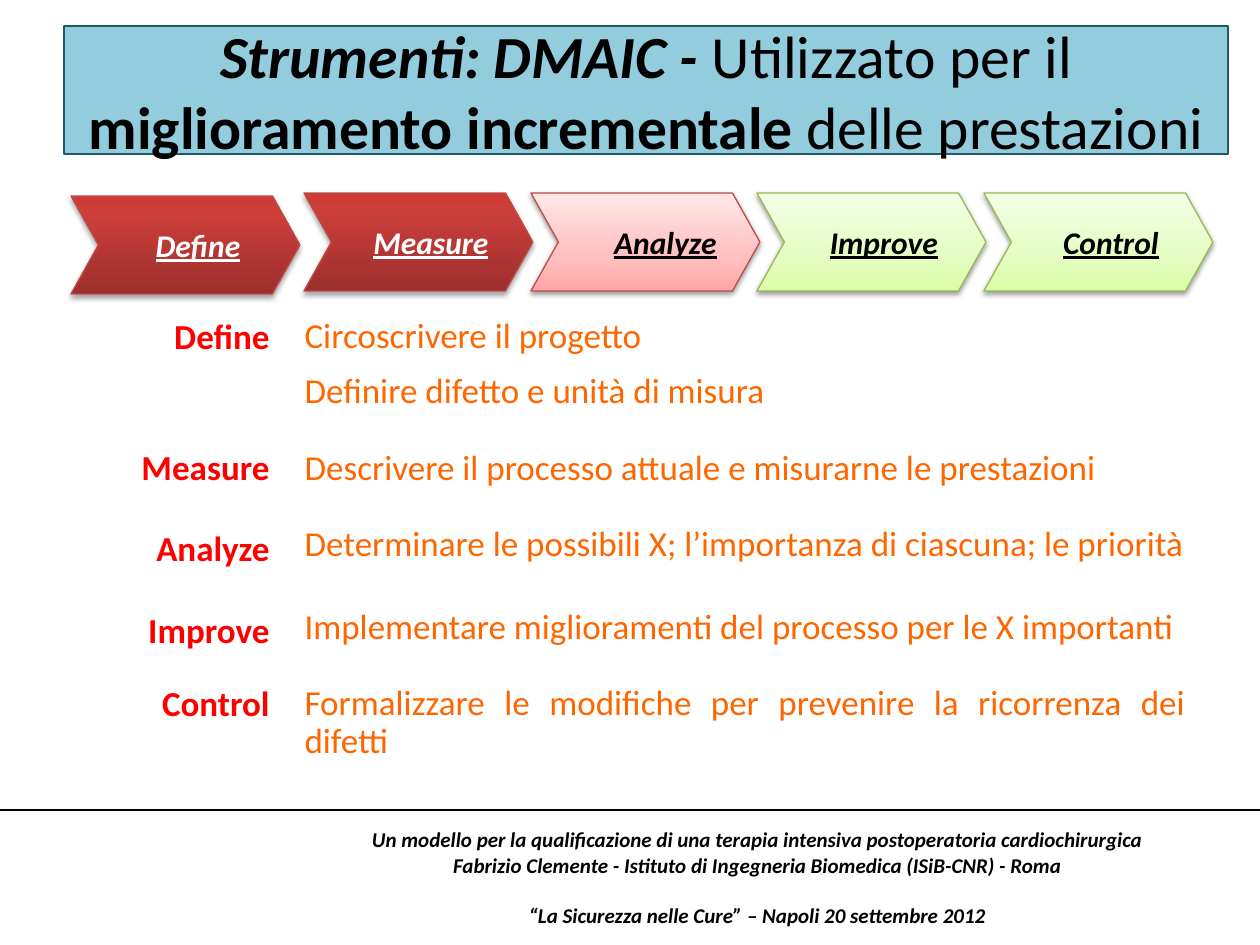
from lxml.etree import SubElement
from copy import deepcopy
from pptx import Presentation
from pptx.dml.color import RGBColor
from pptx.enum.shapes import MSO_CONNECTOR, MSO_SHAPE
from pptx.enum.text import MSO_ANCHOR, MSO_AUTO_SIZE, PP_ALIGN
from pptx.oxml.ns import qn
from pptx.util import Emu, Pt

BLACK = RGBColor(0x00, 0x00, 0x00)
WHITE = RGBColor(0xFF, 0xFF, 0xFF)
RED = RGBColor(0xFF, 0x00, 0x00)
ORANGE = RGBColor(0xFF, 0x66, 0x00)
SKY = RGBColor(0x93, 0xCD, 0xDD)
TEAL = RGBColor(0x21, 0x59, 0x68)
RED_LINE = RGBColor(0xBF, 0x4C, 0x48)
GREEN_LINE = RGBColor(0x98, 0xB9, 0x55)
DARK_RED = [(0, RGBColor(0x9C, 0x2F, 0x2D)), (0.8, RGBColor(0xCB, 0x3E, 0x3A)), (1, RGBColor(0xCE, 0x3B, 0x37))]
PINK = [(0, RGBColor(0xFF, 0xA6, 0xA5)), (0.35, RGBColor(0xFF, 0xC0, 0xBF)), (1, RGBColor(0xFF, 0xE7, 0xE7))]
GREEN = [(0, RGBColor(0xDA, 0xFD, 0xA7)), (0.35, RGBColor(0xE4, 0xFC, 0xC2)), (1, RGBColor(0xF5, 0xFF, 0xE7))]
FONT = "Calibri"


def px(*lengths):
    return [Emu(round(length * 914400 / 126)) for length in lengths]


def write_lines(frame, lines, align, size, color, spacing=1.0, bold=False, italic=False):
    frame.word_wrap = True
    frame.auto_size = MSO_AUTO_SIZE.NONE
    for number, (text, gap) in enumerate(lines):
        paragraph = frame.paragraphs[0] if number == 0 else frame.add_paragraph()
        properties = paragraph._p.get_or_add_pPr()
        properties.set("marL", "0")
        properties.set("indent", "0")
        SubElement(properties, qn("a:buNone"))
        paragraph.text = text
        paragraph.alignment = align
        paragraph.line_spacing = spacing
        paragraph.space_before = Pt(gap)
        font = paragraph.font
        font.name, font.size, font.bold, font.italic = FONT, Pt(size), bold, italic
        font.color.rgb = color


presentation = Presentation()
presentation.slide_width, presentation.slide_height = px(1260, 945)
slide = presentation.slides.add_slide(presentation.slide_layouts[1])
shapes = slide.shapes

footer_rule = shapes.add_connector(MSO_CONNECTOR.STRAIGHT, *px(0, 810, 1260, 810))
footer_rule.line.color.rgb = BLACK
footer_rule.line.width = Pt(0.75)
SubElement(footer_rule._element.spPr, qn("a:effectLst"))

footer = shapes.add_textbox(*px(343, 810, 829, 135))
footer.text_frame.vertical_anchor = MSO_ANCHOR.MIDDLE
write_lines(footer.text_frame, [
    ("Un modello per la qualificazione di una terapia intensiva postoperatoria cardiochirurgica", 0),
    ("Fabrizio Clemente - Istituto di Ingegneria Biomedica (ISiB-CNR) - Roma", 0),
    ("“La Sicurezza nelle Cure” – Napoli 20 settembre 2012", 14.65),
], PP_ALIGN.CENTER, 12, BLACK, bold=True, italic=True)

title = shapes.title
title.left, title.top, title.width, title.height = px(64, 26, 1164, 128)
title.fill.solid()
title.fill.fore_color.rgb = SKY
title.line.color.rgb = TEAL
title.line.width = Pt(0.75)
title.text_frame.auto_size = MSO_AUTO_SIZE.NONE
title.text_frame.vertical_anchor = MSO_ANCHOR.MIDDLE
heading = title.text_frame.paragraphs[0]
heading.alignment = PP_ALIGN.CENTER
heading.font.name = FONT
heading.font.size = Pt(34.1)
heading.font.color.rgb = BLACK
for text, bold, italic in [
    ("Strumenti: DMAIC -", True, True),
    (" Utilizzato per il ", False, False),
    ("miglioramento incrementale", True, False),
    (" delle prestazioni", False, False),
]:
    run = heading.add_run()
    run.text = text
    run.font.bold, run.font.italic = bold, italic

for phase, left, top, stops, outline, ink, indent, opacity, distance in [
    ("Define", 71, 196, DARK_RED, RED_LINE, WHITE, 25, 35, 1.8),
    ("Measure", 304, 193, DARK_RED, RED_LINE, WHITE, 25, 35, 1.8),
    ("Analyze", 531, 193, PINK, RED_LINE, BLACK, 40, 38, 1.6),
    ("Improve", 757, 193, GREEN, GREEN_LINE, BLACK, 25, 38, 1.6),
    ("Control", 984, 193, GREEN, GREEN_LINE, BLACK, 25, 38, 1.6),
]:
    chevron = shapes.add_shape(MSO_SHAPE.CHEVRON, *px(left, top, 229, 98))
    chevron.adjustments[0] = 0.28
    chevron.fill.gradient()
    chevron.fill.gradient_angle = 90
    stop_list = chevron._element.spPr.find(qn("a:gradFill")).find(qn("a:gsLst"))
    stop_list.append(deepcopy(stop_list[-1]))
    for stop, (position, color) in zip(chevron.fill.gradient_stops, stops):
        stop.position = position
        stop.color.rgb = color
    chevron.line.color.rgb = outline
    chevron.line.width = Pt(0.75)
    chevron.shadow.inherit = False
    effects = chevron._element.spPr.find(qn("a:effectLst"))
    shadow = SubElement(effects, qn("a:outerShdw"), blurRad=str(Pt(3.1)), dist=str(Pt(distance)),
                        dir="5400000", rotWithShape="0")
    shade = SubElement(shadow, qn("a:srgbClr"), val=str(BLACK))
    SubElement(shade, qn("a:alpha"), val=str(opacity * 1000))
    frame = chevron.text_frame
    frame.margin_left, frame.margin_top, frame.margin_right, frame.margin_bottom = px(3, 1, 3, 1)
    frame.vertical_anchor = MSO_ANCHOR.MIDDLE
    write_lines(frame, [(phase, 0)], PP_ALIGN.CENTER, 18, ink, bold=True, italic=True)
    frame.paragraphs[0].font.underline = True
    frame.paragraphs[0]._p.pPr.set("marL", str(px(indent)[0]))

activities = slide.placeholders[1]
activities.left, activities.top, activities.width, activities.height = px(292, 312, 906, 486)
write_lines(activities.text_frame, [
    ("Circoscrivere il progetto", 0),
    ("Definire difetto e unità di misura", 9.5),
    ("Descrivere il processo attuale e misurarne le prestazioni", 22.5),
    ("Determinare le possibili X; l’importanza di ciascuna; le priorità", 22.2),
    ("Implementare miglioramenti del processo per le X importanti", 25.5),
    ("Formalizzare le modifiche per prevenire la ricorrenza dei difetti", 22.2),
], PP_ALIGN.JUSTIFY, 20, ORANGE, spacing=0.9)

phase_labels = shapes.add_textbox(*px(123, 313, 159, 449))
write_lines(phase_labels.text_frame, [
    ("Define", 0),
    ("Measure", 53.5),
    ("Analyze", 24.3),
    ("Improve", 25.5),
    ("Control", 20.3),
], PP_ALIGN.RIGHT, 20, RED, spacing=0.9, bold=True)

presentation.save("out.pptx")
